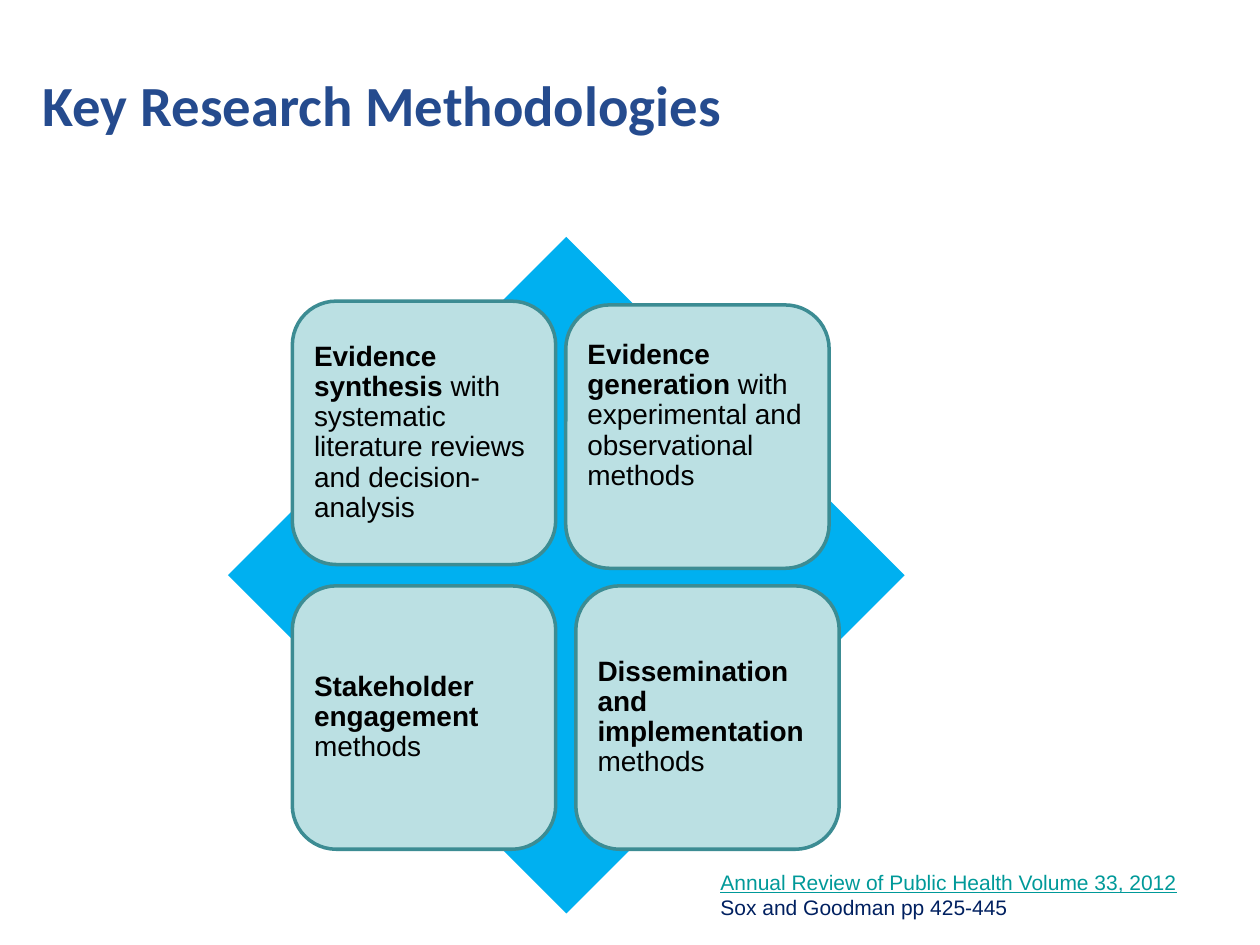
from pptx import Presentation
from pptx.dml.color import RGBColor
from pptx.enum.shapes import MSO_SHAPE
from pptx.enum.text import MSO_ANCHOR, PP_ALIGN
from pptx.util import Inches, Pt

TITLE = "Key Research Methodologies"
METHODS = [
    ("Evidence synthesis", " with systematic literature reviews and decision- analysis", 2.32, 2.39, 0.07),
    ("Evidence generation", " with experimental and observational methods", 4.49, 2.42, 0.4),
    ("Stakeholder engagement", " methods", 2.32, 4.65, 0.07),
    ("Dissemination and implementation", " methods", 4.57, 4.65, 0.07),
]
CITATION = [
    ("Annual Review of Public Health Volume 33, 2012", "009999", True),
    ("Sox and Goodman pp 425-445", "002060", False),
]
CARD_SIZE = 2.09
DIAMOND = (1.81, 1.88, 5.37, 5.37)


def color(value):
    return RGBColor.from_string(value)


def write(paragraph, text, size, ink="000000", face="Arial", bold=False, underline=False):
    run = paragraph.add_run()
    run.text = text
    run.font.name, run.font.size = face, Pt(size)
    run.font.bold, run.font.underline = bold, underline
    run.font.color.rgb = color(ink)


def add_block(slide, preset, box, fill, line=None):
    block = slide.shapes.add_shape(preset, *map(Inches, box))
    block.shadow.inherit = False
    block.fill.solid()
    block.fill.fore_color.rgb = color(fill)
    if line:
        block.line.color.rgb = color(line)
        block.line.width = Pt(2)
    else:
        block.line.fill.background()
    return block


def add_card(slide, topic, detail, left, top, bottom_inset):
    box = (left, top, CARD_SIZE, CARD_SIZE)
    frame = add_block(slide, MSO_SHAPE.ROUNDED_RECTANGLE, box, "BBE0E3", "3C8C93").text_frame
    frame.word_wrap = True
    frame.vertical_anchor = MSO_ANCHOR.MIDDLE
    frame.margin_left = frame.margin_right = frame.margin_top = Inches(0.07)
    frame.margin_bottom = Inches(bottom_inset)
    paragraph = frame.paragraphs[0]
    paragraph.alignment = PP_ALIGN.LEFT
    paragraph.line_spacing = 0.9
    write(paragraph, topic, 16, bold=True)
    write(paragraph, detail, 16)


def main():
    """Build the research methodologies slide."""
    deck = Presentation()
    deck.slide_width, deck.slide_height = Inches(10), Inches(7.5)
    slide = deck.slides.add_slide(deck.slide_layouts[5])

    title = slide.shapes.title
    title.left, title.top, title.width, title.height = map(Inches, (0.24, 0.47, 8.5, 1.25))
    title.text_frame.vertical_anchor = MSO_ANCHOR.TOP
    title.text_frame.margin_top = Inches(0.08)
    heading = title.text_frame.paragraphs[0]
    heading.alignment = PP_ALIGN.LEFT
    write(heading, TITLE, 32.4, "254B8E", "Calibri", bold=True)

    add_block(slide, MSO_SHAPE.DIAMOND, DIAMOND, "00B0F0")
    for method in METHODS:
        add_card(slide, *method)

    citation = slide.shapes.add_textbox(*map(Inches, (5.62, 6.85, 4.3, 0.6))).text_frame
    citation.word_wrap = True
    for index, (text, ink, underline) in enumerate(CITATION):
        paragraph = citation.add_paragraph() if index else citation.paragraphs[0]
        write(paragraph, text, 12, ink, underline=underline)

    deck.save("out.pptx")


if __name__ == "__main__":
    main()
